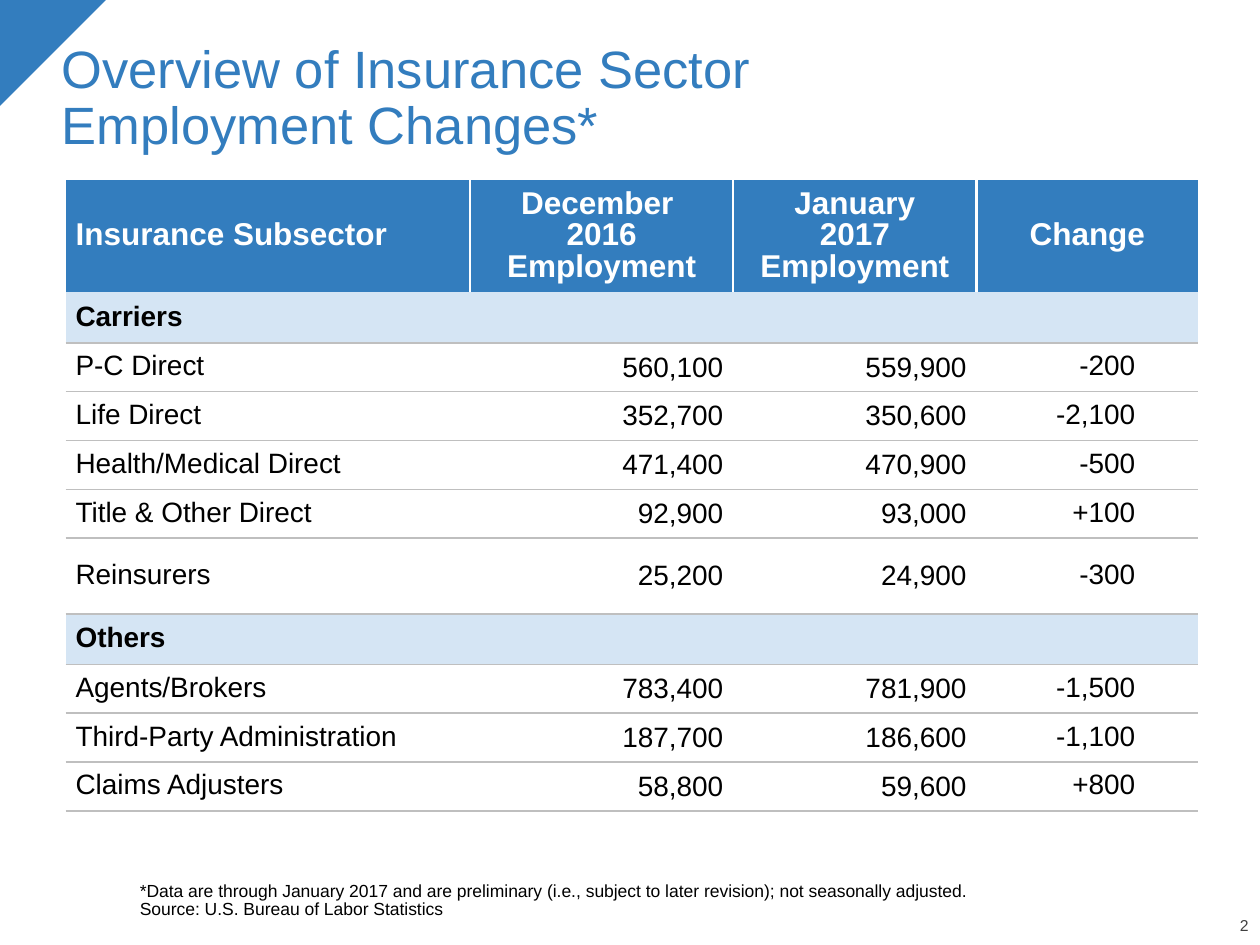
"""Build the insurance sector employment slide with its table."""
from lxml import etree
from pptx import Presentation
from pptx.dml.color import RGBColor
from pptx.enum import shapes, text
from pptx.oxml.ns import qn
from pptx.util import Inches, Pt

BLUE = RGBColor(0x33, 0x7D, 0xBE)
PALE = RGBColor(0xD5, 0xE5, 0xF4)
RULE = RGBColor(0xBF, 0xBF, 0xBF)
GREY = RGBColor(0x40, 0x40, 0x40)
WHITE = RGBColor(0xFF, 0xFF, 0xFF)
BLACK = RGBColor(0, 0, 0)
LEFT, CENTER, RIGHT = text.PP_ALIGN.LEFT, text.PP_ALIGN.CENTER, text.PP_ALIGN.RIGHT
BOTTOM, MIDDLE = text.MSO_ANCHOR.BOTTOM, text.MSO_ANCHOR.MIDDLE

TITLE = "Overview of Insurance Sector \vEmployment Changes*"
NOTE = ("*Data are through January 2017 and are preliminary (i.e., subject to later "
        "revision); not seasonally adjusted.\vSource: U.S. Bureau of Labor Statistics")
PAGE = "2"
ROWS = [
    ("Insurance Subsector", "December \v2016\nEmployment", "January\v2017\nEmployment", "Change"),
    ("Carriers", "", "", ""),
    ("P-C Direct", "560,100", "559,900", "-200"),
    ("Life Direct", "352,700", "350,600", "-2,100"),
    ("Health/Medical Direct", "471,400", "470,900", "-500"),
    ("Title & Other Direct", "92,900", "93,000", "+100"),
    ("Reinsurers", "25,200", "24,900", "-300"),
    ("Others", "", "", ""),
    ("Agents/Brokers", "783,400", "781,900", "-1,500"),
    ("Third-Party Administration", "187,700", "186,600", "-1,100"),
    ("Claims Adjusters", "58,800", "59,600", "+800"),
]
COL_WIDTHS = (3.21, 2.09, 1.93, 1.76)
ROW_HEIGHT = Pt(27.9)
TALL_ROWS = {"Insurance Subsector": Inches(0.89), "Reinsurers": Inches(0.6)}
NO_GRID_STYLE = "{2D5ABB26-0587-4C30-8999-92F81FD0307C}"


def set_all(obj, values):
    for name, value in values.items():
        setattr(obj, name, value)


def write(tf, content, size, color, bold=False, align=LEFT, spacing=0.9):
    tf.text = content
    for p in tf.paragraphs:
        set_all(p, {"alignment": align, "line_spacing": spacing, "space_before": Pt(0)})
        for r in p.runs:
            set_all(r.font, {"name": "Arial", "size": Pt(size), "bold": bold})
            r.font.color.rgb = color
        for br in p._p.findall(qn("a:br")):
            etree.SubElement(br, qn("a:rPr"), sz=str(size * 100))
        if not p.runs:
            p._p.get_or_add_endParaRPr().set("sz", str(size * 100))


def add_text(s, box, content, size, color, align=LEFT):
    tf = s.shapes.add_textbox(*map(Inches, box)).text_frame
    set_all(tf, {"word_wrap": True, "vertical_anchor": BOTTOM, "margin_left": 0,
                 "margin_top": 0, "margin_right": 0, "margin_bottom": 0})
    write(tf, content, size, color, align=align)


def add_border(cell, side, color, width):
    ln = etree.SubElement(cell._tc.get_or_add_tcPr(), qn("a:ln" + side), w=str(Pt(width)))
    fill = etree.SubElement(ln, qn("a:solidFill"))
    etree.SubElement(fill, qn("a:srgbClr"), val=str(color))


def format_cell(cell, content, col, header, section):
    last = len(COL_WIDTHS) - 1
    wide_right = col == last and not header
    set_all(cell, {"vertical_anchor": MIDDLE, "margin_left": Inches(0.08),
                   "margin_right": Inches(0.5 if wide_right else 0.08),
                   "margin_top": Pt(4.7), "margin_bottom": Pt(4.7)})
    align = LEFT if col == 0 else CENTER if header else RIGHT
    spacing = 0.9 if header or col in (0, last) else 1.0
    write(cell.text_frame, content, 18 if header else 16, WHITE if header else BLACK,
          header or section, align, spacing)
    if header:
        if col > 0:
            add_border(cell, "L", WHITE, 1.5)
        if col < last:
            add_border(cell, "R", WHITE, 1.5)
    else:
        add_border(cell, "B", RULE, 1)
    if header or section:
        cell.fill.solid()
        cell.fill.fore_color.rgb = BLUE if header else PALE
    else:
        cell.fill.background()


def add_employment_table(s):
    heights = [TALL_ROWS.get(row[0], ROW_HEIGHT) for row in ROWS]
    frame = s.shapes.add_table(len(ROWS), len(COL_WIDTHS), Inches(0.52), Inches(1.43),
                               Inches(sum(COL_WIDTHS)), sum(heights))
    tbl = frame.table
    tbl.horz_banding = False
    tbl._tbl.tblPr.find(qn("a:tableStyleId")).text = NO_GRID_STYLE
    for column, width in zip(tbl.columns, COL_WIDTHS):
        column.width = Inches(width)
    for i, (row, height) in enumerate(zip(ROWS, heights)):
        tbl.rows[i].height = height
        for j, content in enumerate(row):
            format_cell(tbl.cell(i, j), content, j, i == 0, not row[1])


def main():
    prs = Presentation()
    set_all(prs, {"slide_width": Inches(10), "slide_height": Inches(7.5)})
    s = prs.slides.add_slide(prs.slide_layouts[5])

    sp = s.shapes.add_shape(shapes.MSO_SHAPE.RIGHT_TRIANGLE, 0, 0, Inches(0.84), Inches(0.84))
    sp.rotation = 90
    sp.shadow.inherit = False
    sp.fill.solid()
    sp.fill.fore_color.rgb = BLUE
    sp.line.fill.background()

    title = s.shapes.title
    set_all(title, {"left": Inches(0.39), "top": Inches(0.25),
                    "width": Inches(9.25), "height": Inches(1.04)})
    set_all(title.text_frame, {"vertical_anchor": BOTTOM, "word_wrap": True,
                               "auto_size": text.MSO_AUTO_SIZE.NONE})
    write(title.text_frame, TITLE, 30, BLUE)

    add_employment_table(s)
    add_text(s, (1.11, 6.85, 8.4, 0.45), NOTE, 10, BLACK)
    add_text(s, (9.43, 7.29, 0.48, 0.13), PAGE, 9, GREY, RIGHT)
    prs.save("out.pptx")


if __name__ == "__main__":
    main()
